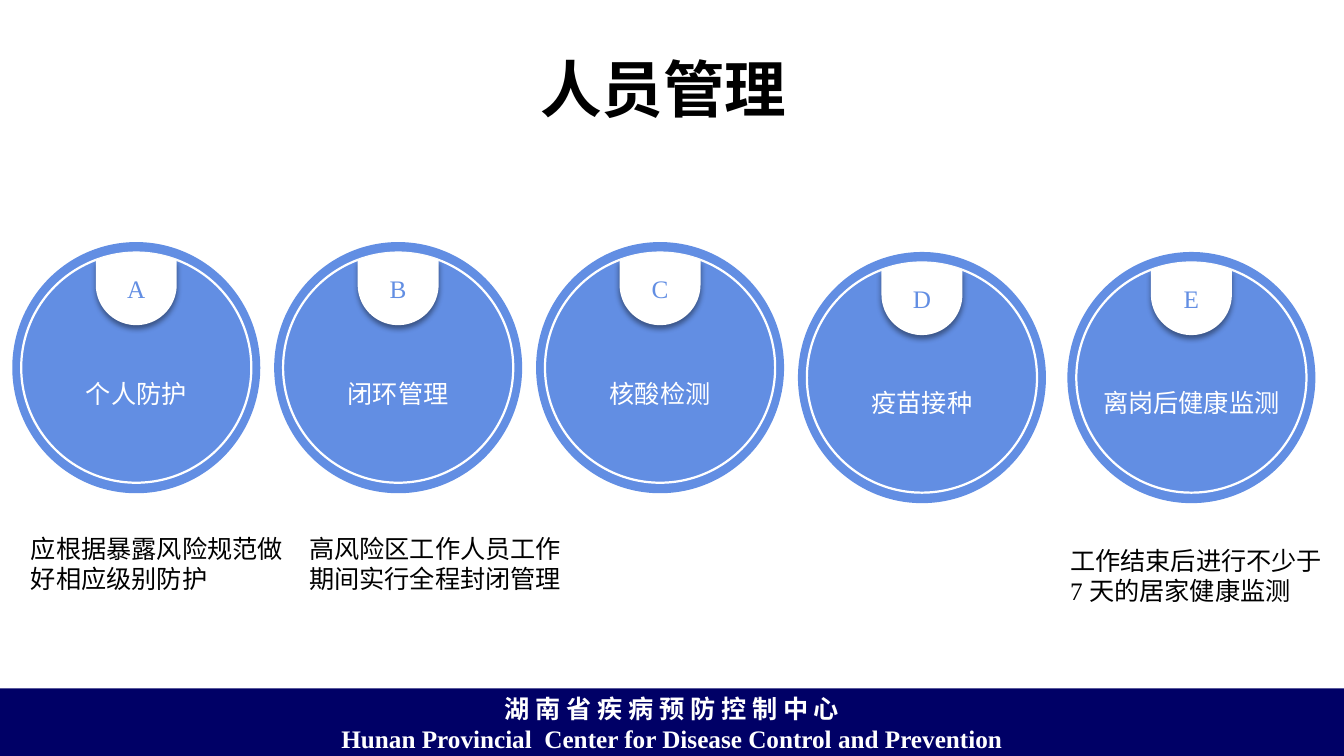
import math

import pptx
import pptx.dml.color
import pptx.enum.shapes
import pptx.enum.text
import pptx.oxml
import pptx.oxml.ns
import pptx.util

Cm = pptx.util.Cm
RGBColor = pptx.dml.color.RGBColor
SHAPE = pptx.enum.shapes.MSO_SHAPE
ALIGN = pptx.enum.text.PP_ALIGN
ANCHOR = pptx.enum.text.MSO_ANCHOR

NAVY = RGBColor(0x00, 0x00, 0x66)
BLUE = RGBColor(0x62, 0x8E, 0xE3)
WHITE = RGBColor(0xFF, 0xFF, 0xFF)
BLACK = RGBColor(0x00, 0x00, 0x00)
LATIN, CJK = "Times New Roman", "Noto Sans CJK SC"

DISC_W, DISC_H = 6.25, 6.33
RING_R = 2.9
TAB_R = 1.02  # half width of the letter tab
TAB_DROP = 2.09  # from the tab's arc centre down to the disc centre

SHADOW = (
    '<a:outerShdw %s blurRad="50800" dist="38100" dir="5400000">'
    '<a:srgbClr val="000000"><a:alpha val="40000"/></a:srgbClr></a:outerShdw>'
    % pptx.oxml.ns.nsdecls("a")
)


def write(tf, text, size=18, color=BLACK, bold=False, align=ALIGN.LEFT,
          anchor=ANCHOR.TOP, wrap=True, latin=LATIN):
    """Fill a text frame, one paragraph per line of text."""
    tf.word_wrap = wrap
    tf.vertical_anchor = anchor
    for i, line in enumerate(text.split("\n")):
        p = tf.add_paragraph() if i else tf.paragraphs[0]
        p.alignment = align
        r = p.add_run()
        r.text = line
        r.font.size = pptx.util.Pt(size)
        r.font.bold = bold
        r.font.color.rgb = color
        r.font.name = latin
        ea = pptx.oxml.parse_xml(
            '<a:ea %s typeface="%s"/>' % (pptx.oxml.ns.nsdecls("a"), CJK))
        r.font._element.find(pptx.oxml.ns.qn("a:latin")).addnext(ea)


class Deck:
    """Holds the style and the current slide; lengths are centimetres."""

    def __init__(self, s):
        self.s = s

    def paint(self, sp, fill=None):
        sp.shadow.inherit = False
        sp.line.fill.background()
        if fill is None:
            sp.fill.background()
        else:
            sp.fill.solid()
            sp.fill.fore_color.rgb = fill
        return sp

    def shape(self, kind, x, y, w, h, fill=None):
        sp = self.s.shapes.add_shape(kind, Cm(x), Cm(y), Cm(w), Cm(h))
        return self.paint(sp, fill)

    def text(self, x, y, w, h, text, **fmt):
        box = self.s.shapes.add_textbox(Cm(x), Cm(y), Cm(w), Cm(h))
        write(box.text_frame, text, **fmt)

    def tab(self, cx, cy, letter):
        """White tab hanging from the ring: arched top, round bottom."""
        half = math.asin(TAB_R / RING_R)
        top = [(cx + RING_R * math.sin(a), cy - RING_R * math.cos(a))
               for a in (half * (i / 8 - 1) for i in range(17))]
        bottom = [(cx + TAB_R * math.cos(a), cy - TAB_DROP + TAB_R * math.sin(a))
                  for a in (math.pi * i / 48 for i in range(49))]
        points = [(Cm(x), Cm(y)) for x, y in top + bottom]
        fb = self.s.shapes.build_freeform(*points[0])
        fb.add_line_segments(points[1:], close=True)
        sp = self.paint(fb.convert_to_shape(), WHITE)
        effects = sp._element.spPr.find(pptx.oxml.ns.qn("a:effectLst"))
        effects.append(pptx.oxml.parse_xml(SHADOW))
        write(sp.text_frame, letter, color=BLUE, align=ALIGN.CENTER,
              anchor=ANCHOR.MIDDLE)

    def badge(self, x, y, letter, label):
        """Blue disc with a thin white ring, a lettered tab and a label."""
        disc = self.shape(SHAPE.OVAL, x, y, DISC_W, DISC_H, BLUE)
        disc.text_frame.margin_top = Cm(1.4)
        write(disc.text_frame, label, color=WHITE, align=ALIGN.CENTER,
              anchor=ANCHOR.MIDDLE, wrap=False)
        cx, cy = x + DISC_W / 2, y + DISC_H / 2
        ring = self.shape(SHAPE.OVAL, cx - RING_R, cy - RING_R,
                          2 * RING_R, 2 * RING_R)
        ring.line.color.rgb = WHITE
        ring.line.width = pptx.util.Pt(1.6)
        self.tab(cx, cy, letter)


def main():
    prs = pptx.Presentation()
    prs.slide_width, prs.slide_height = Cm(33.87), Cm(19.05)
    deck = Deck(prs.slides.add_slide(prs.slide_layouts[6]))

    # Footer band
    band = deck.shape(SHAPE.RECTANGLE, 0, 17.35, 33.87, 1.8, NAVY)
    write(band.text_frame,
          "湖 南 省 疾 病 预 防 控 制 中 心\n"
          "Hunan Provincial  Center for Disease Control and Prevention",
          color=WHITE, bold=True, align=ALIGN.CENTER)

    # Title
    deck.text(1.12, 1.47, 31.2, 1.47, "人员管理", size=44, bold=True,
              align=ALIGN.CENTER, anchor=ANCHOR.MIDDLE, latin=CJK)

    # Five measures: the last two sit lower, the last one further right
    labels = ["个人防护", "闭环管理", "核酸检测", "疫苗接种", "离岗后健康监测"]
    for i, (letter, label) in enumerate(zip("ABCDE", labels)):
        x = 26.9 if letter == "E" else 0.31 + 6.6 * i
        y = 6.1 if i < 3 else 6.35
        deck.badge(x, y, letter, label)

    # Explanations under the discs
    notes = [
        (0.53, 13.31, 7.42, "应根据暴露风险规范做好相应级别防护"),
        (7.54, 13.31, 7.06, "高风险区工作人员工作期间实行全程封闭管理"),
        (26.72, 13.61, 7.14, "工作结束后进行不少于 7 天的居家健康监测"),
    ]
    for x, y, w, note in notes:
        deck.text(x, y, w, 1.8, note)

    prs.save("out.pptx")


if __name__ == "__main__":
    main()
